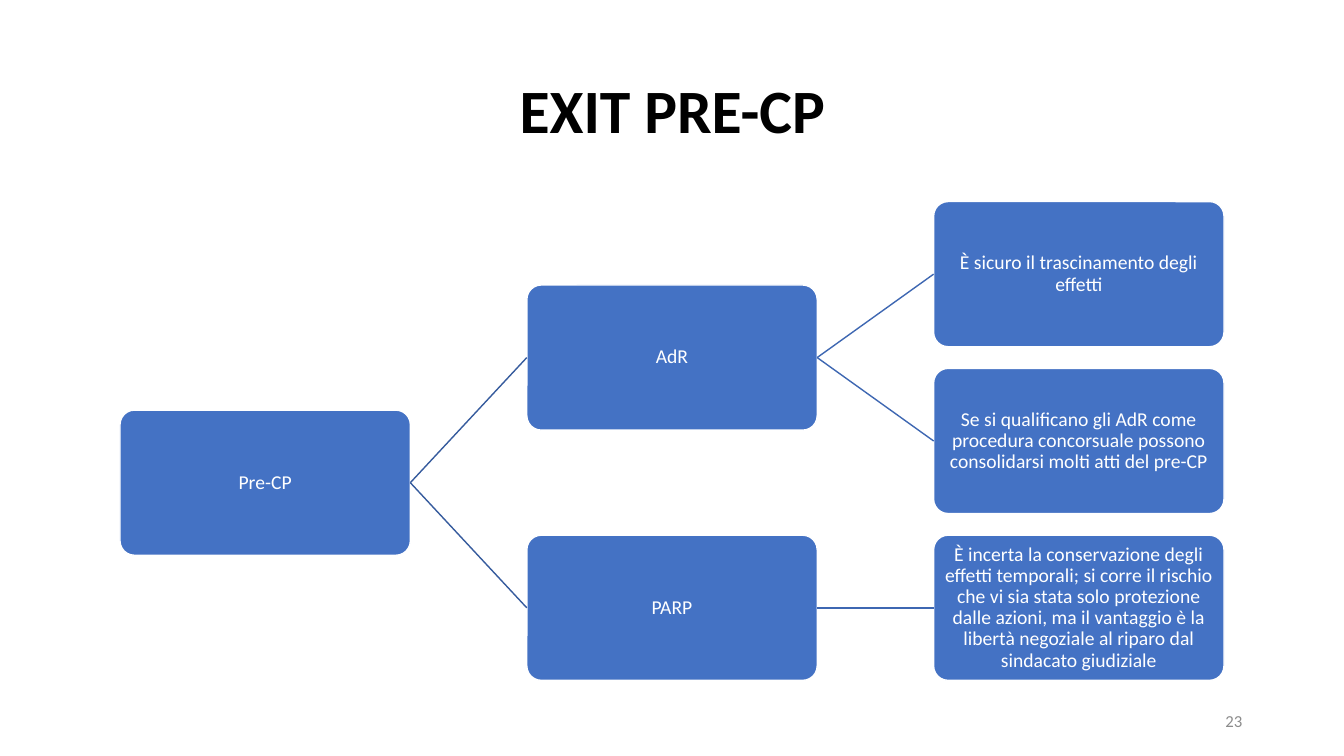
from dataclasses import dataclass

from lxml import etree
from pptx import Presentation
from pptx.dml.color import RGBColor
from pptx.enum.shapes import MSO_CONNECTOR, MSO_SHAPE
from pptx.enum.text import MSO_ANCHOR, PP_ALIGN
from pptx.oxml.ns import qn
from pptx.shapes.autoshape import Shape
from pptx.slide import Slide
from pptx.text.text import TextFrame
from pptx.util import Inches, Pt

ROUNDED = MSO_SHAPE.ROUNDED_RECTANGLE
STRAIGHT = MSO_CONNECTOR.STRAIGHT
MIDDLE = MSO_ANCHOR.MIDDLE
CENTER = PP_ALIGN.CENTER
RIGHT = PP_ALIGN.RIGHT
LEFT_SITE, RIGHT_SITE = 1, 3


@dataclass(frozen=True)
class Theme:
    font: str = "Calibri"
    black: str = "000000"
    white: str = "FFFFFF"
    gray: str = "8C8C8C"
    box_fill: str = "4472C4"
    branch_lines: tuple[str, ...] = ("365B9D", "3E67B2")
    title_size: float = 44
    box_size: float = 14
    number_size: float = 12
    line_width: float = 1


@dataclass(frozen=True)
class TreeLayout:
    left: float = 1.19
    first_center: float = 2.72
    column_step: float = 4.035
    row_step: float = 1.655
    width: float = 2.88
    height: float = 1.44
    inset: float = 0.05


@dataclass(frozen=True)
class Node:
    text: str
    children: tuple["Node", ...] = ()


THEME = Theme()
LAYOUT = TreeLayout()
EXIT_TREE = Node("Pre-CP", (
    Node("AdR", (
        Node("È sicuro il trascinamento degli effetti"),
        Node("Se si qualificano gli AdR come procedura concorsuale possono "
             "consolidarsi molti atti del pre-CP"),
    )),
    Node("PARP", (
        Node("È incerta la conservazione degli effetti temporali; si corre il "
             "rischio che vi sia stata solo protezione dalle azioni, ma il "
             "vantaggio è la libertà negoziale al riparo dal sindacato giudiziale"),
    )),
))


def write_text(frame: TextFrame, text: str, *, size: float, color: str,
               bold: bool = False, align: PP_ALIGN = CENTER,
               spacing: float = 0.9, inset: float | None = None) -> None:
    frame.word_wrap = True
    frame.vertical_anchor = MIDDLE
    if inset is not None:
        frame.margin_left = frame.margin_right = Inches(inset)
        frame.margin_top = frame.margin_bottom = Inches(inset)
    para = frame.paragraphs[0]
    para.alignment = align
    para.line_spacing = spacing
    span = para.add_run()
    span.text = text
    span.font.name = THEME.font
    span.font.size = Pt(size)
    span.font.bold = bold
    span.font.color.rgb = RGBColor.from_string(color)


def place_title(page: Slide, text: str) -> None:
    title = page.shapes.title
    title.left, title.top = Inches(0.92), Inches(0.4)
    title.width, title.height = Inches(11.5), Inches(1.45)
    write_text(title.text_frame, text, size=THEME.title_size,
               color=THEME.black, bold=True)


def draw_box(page: Slide, text: str, depth: int, center: float) -> Shape:
    box = page.shapes.add_shape(
        ROUNDED,
        Inches(LAYOUT.left + depth * LAYOUT.column_step),
        Inches(center - LAYOUT.height / 2),
        Inches(LAYOUT.width), Inches(LAYOUT.height))
    box.adjustments[0] = 0.1
    box.shadow.inherit = False
    box.fill.solid()
    box.fill.fore_color.rgb = RGBColor.from_string(THEME.box_fill)
    box.line.color.rgb = RGBColor.from_string(THEME.white)
    box.line.width = Pt(THEME.line_width)
    write_text(box.text_frame, text, size=THEME.box_size, color=THEME.white,
               inset=LAYOUT.inset)
    return box


def draw_branch(page: Slide, parent: Shape, child: Shape, color: str) -> None:
    branch = page.shapes.add_connector(STRAIGHT, 0, 0, 0, 0)
    branch.begin_connect(parent, RIGHT_SITE)
    branch.end_connect(child, LEFT_SITE)
    branch.line.color.rgb = RGBColor.from_string(color)
    branch.line.width = Pt(THEME.line_width)
    etree.SubElement(branch._element.spPr, qn("a:effectLst"))


def count_leaves(node: Node) -> int:
    return sum(map(count_leaves, node.children)) or 1


def find_center(node: Node, first_row: int) -> float:
    if not node.children:
        return LAYOUT.first_center + first_row * LAYOUT.row_step
    last = node.children[-1]
    last_row = first_row + count_leaves(node) - count_leaves(last)
    return (find_center(node.children[0], first_row)
            + find_center(last, last_row)) / 2


def draw_tree(page: Slide, node: Node, depth: int = 0, first_row: int = 0) -> Shape:
    box = draw_box(page, node.text, depth, find_center(node, first_row))
    for child in node.children:
        child_box = draw_tree(page, child, depth + 1, first_row)
        draw_branch(page, box, child_box, THEME.branch_lines[depth])
        first_row += count_leaves(child)
    return box


def place_number(page: Slide, text: str) -> None:
    box = page.shapes.add_textbox(Inches(9.42), Inches(6.95), Inches(3), Inches(0.4))
    write_text(box.text_frame, text, size=THEME.number_size, color=THEME.gray,
               align=RIGHT, spacing=1.0)


def main() -> None:
    deck = Presentation()
    deck.slide_width, deck.slide_height = Inches(13.33), Inches(7.5)
    page = deck.slides.add_slide(deck.slide_layouts[5])
    place_title(page, "EXIT PRE-CP")
    draw_tree(page, EXIT_TREE)
    place_number(page, "23")
    deck.save("out.pptx")


if __name__ == "__main__":
    main()
